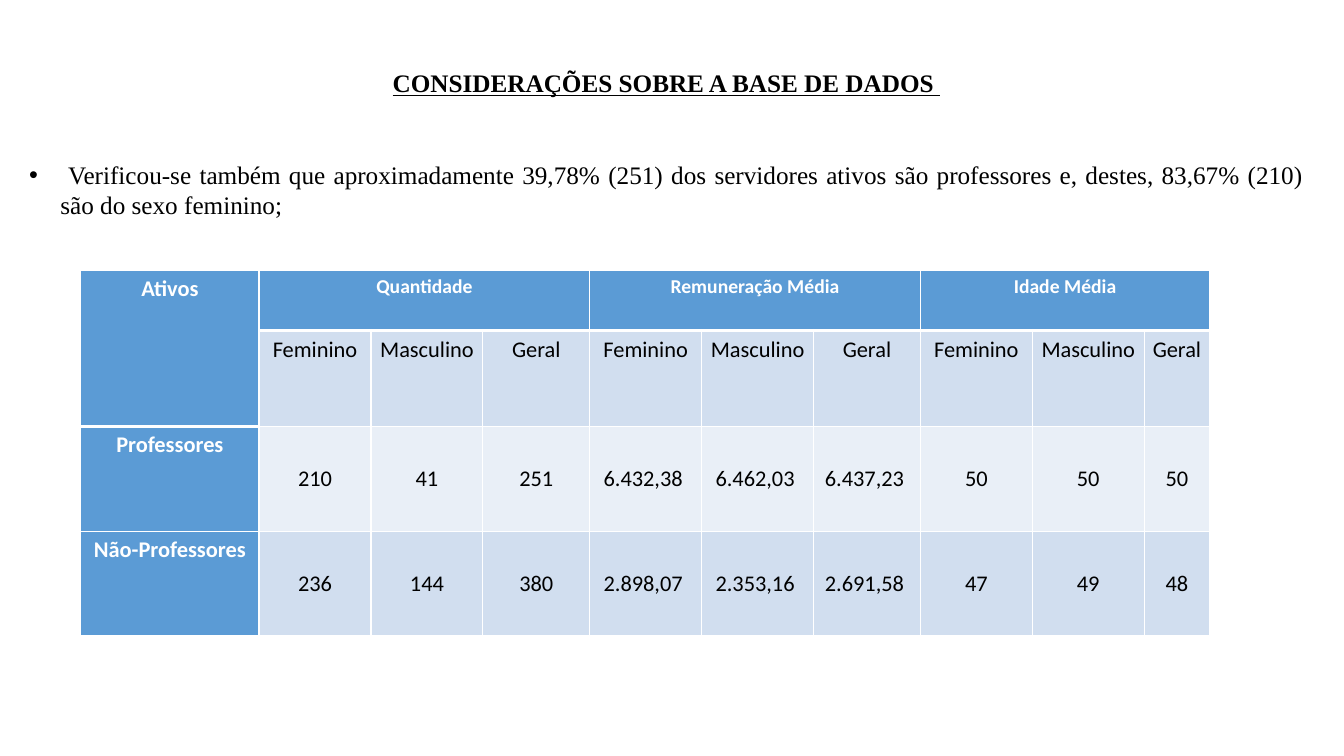
from lxml.etree import SubElement
from pptx import Presentation
from pptx.dml.color import RGBColor
from pptx.enum.text import MSO_ANCHOR, PP_ALIGN
from pptx.oxml import parse_xml
from pptx.oxml.ns import nsdecls, qn
from pptx.util import Inches, Pt

TITLE = "CONSIDERAÇÕES SOBRE A BASE DE DADOS "
FINDING = (" Verificou-se também que aproximadamente 39,78% (251) dos servidores ativos "
           "são professores e, destes, 83,67% (210) são do sexo feminino;")
CORNER = "Ativos"
MEASURES = ["Quantidade", "Remuneração Média", "Idade Média"]
GROUPS = ["Feminino", "Masculino", "Geral"]
STAFF = {
    "Professores": ["210", "41", "251", "6.432,38 ", "6.462,03 ", "6.437,23 ", "50", "50", "50"],
    "Não-Professores": ["236", "144", "380", "2.898,07 ", "2.353,16 ", "2.691,58 ", "47", "49", "48"],
}
COLUMN_WIDTHS = [1.77] + [1.11, 1.11, 1.06] * 2 + [1.11, 1.11, 0.65]
ROW_HEIGHTS = [0.6, 0.95, 1.04, 1.04]

BLACK = RGBColor(0x00, 0x00, 0x00)
WHITE = RGBColor(0xFF, 0xFF, 0xFF)
HEADER_BLUE = RGBColor(0x5B, 0x9B, 0xD5)
BAND_DARK = RGBColor(0xD1, 0xDE, 0xEF)
BAND_LIGHT = RGBColor(0xE9, 0xEF, 0xF7)
BANDS = [None, BAND_DARK, BAND_LIGHT, BAND_DARK]
THIN, THICK = 0.96, 3


def style_run(paragraph, font_name, size, color, bold=False, underline=False):
    font = paragraph.runs[0].font
    font.name, font.size = font_name, Pt(size)
    font.bold, font.underline = bold, underline
    font.color.rgb = color


def add_bullet(paragraph, indent):
    properties = paragraph._p.get_or_add_pPr()
    properties.set("marL", str(Inches(indent)))
    properties.set("indent", str(-Inches(indent)))
    SubElement(properties, qn("a:buFont"), typeface="Arial")
    SubElement(properties, qn("a:buChar"), char="•")


def set_borders(cell, top, bottom):
    """Draw white lines on all sides, with the given top and bottom widths."""
    sides = [("lnL", THIN), ("lnR", THIN), ("lnT", top), ("lnB", bottom)]
    for position, (side, width) in enumerate(sides):
        line = parse_xml(
            f'<a:{side} {nsdecls("a")} w="{Pt(width)}"><a:solidFill>'
            f'<a:srgbClr val="{WHITE}"/></a:solidFill></a:{side}>')
        cell._tc.get_or_add_tcPr().insert(position, line)


def add_heading(slide):
    frame = slide.shapes.add_textbox(
        Inches(0.19), Inches(0.62), Inches(12.84), Inches(1.61)).text_frame
    frame.word_wrap = True
    title = frame.paragraphs[0]
    title.text = TITLE
    title.alignment = PP_ALIGN.CENTER
    title.space_after = Pt(44)
    style_run(title, "Times New Roman", 18, BLACK, bold=True, underline=True)
    finding = frame.add_paragraph()
    finding.text = FINDING
    finding.alignment = PP_ALIGN.JUSTIFY
    style_run(finding, "Times New Roman", 18, BLACK)
    add_bullet(finding, 0.31)


def fill_cell(cell, row, column, text):
    is_header = row == 0 or column == 0
    is_value = row > 1 and column > 0
    margin = Inches(0 if is_value else 0.05)
    cell.margin_left = cell.margin_right = margin
    cell.margin_top = cell.margin_bottom = margin
    cell.vertical_anchor = MSO_ANCHOR.MIDDLE if is_value else MSO_ANCHOR.TOP
    cell.fill.solid()
    cell.fill.fore_color.rgb = HEADER_BLUE if is_header else BANDS[row]
    header_end = 1 if column == 0 else 0
    set_borders(cell,
                top=THICK if row == header_end + 1 else THIN,
                bottom=THICK if row in (0, header_end) else THIN)
    if text:
        paragraph = cell.text_frame.paragraphs[0]
        paragraph.text = text
        paragraph.alignment = PP_ALIGN.CENTER
        paragraph.space_before, paragraph.space_after = Pt(12), Pt(3)
        size = 14 if row == 0 and column > 0 else 16
        style_run(paragraph, "Calibri", size, WHITE if is_header else BLACK, bold=is_header)


def add_staff_table(slide):
    measure_row = [CORNER]
    for measure in MEASURES:
        measure_row += [measure] + [""] * (len(GROUPS) - 1)
    rows = [measure_row, [""] + GROUPS * len(MEASURES)]
    rows += [[name] + values for name, values in STAFF.items()]

    table = slide.shapes.add_table(
        len(rows), len(COLUMN_WIDTHS), Inches(0.8), Inches(2.68),
        Inches(sum(COLUMN_WIDTHS)), Inches(sum(ROW_HEIGHTS))).table
    for column, width in zip(table.columns, COLUMN_WIDTHS):
        column.width = Inches(width)
    for row, height in zip(table.rows, ROW_HEIGHTS):
        row.height = Inches(height)
    for r, texts in enumerate(rows):
        for c, text in enumerate(texts):
            fill_cell(table.cell(r, c), r, c, text)

    table.cell(0, 0).merge(table.cell(1, 0))
    for first in range(1, len(COLUMN_WIDTHS), len(GROUPS)):
        table.cell(0, first).merge(table.cell(0, first + len(GROUPS) - 1))


def main():
    presentation = Presentation()
    presentation.slide_width, presentation.slide_height = Inches(13.33), Inches(7.5)
    slide = presentation.slides.add_slide(presentation.slide_layouts[6])
    add_heading(slide)
    add_staff_table(slide)
    presentation.save("out.pptx")


if __name__ == "__main__":
    main()
